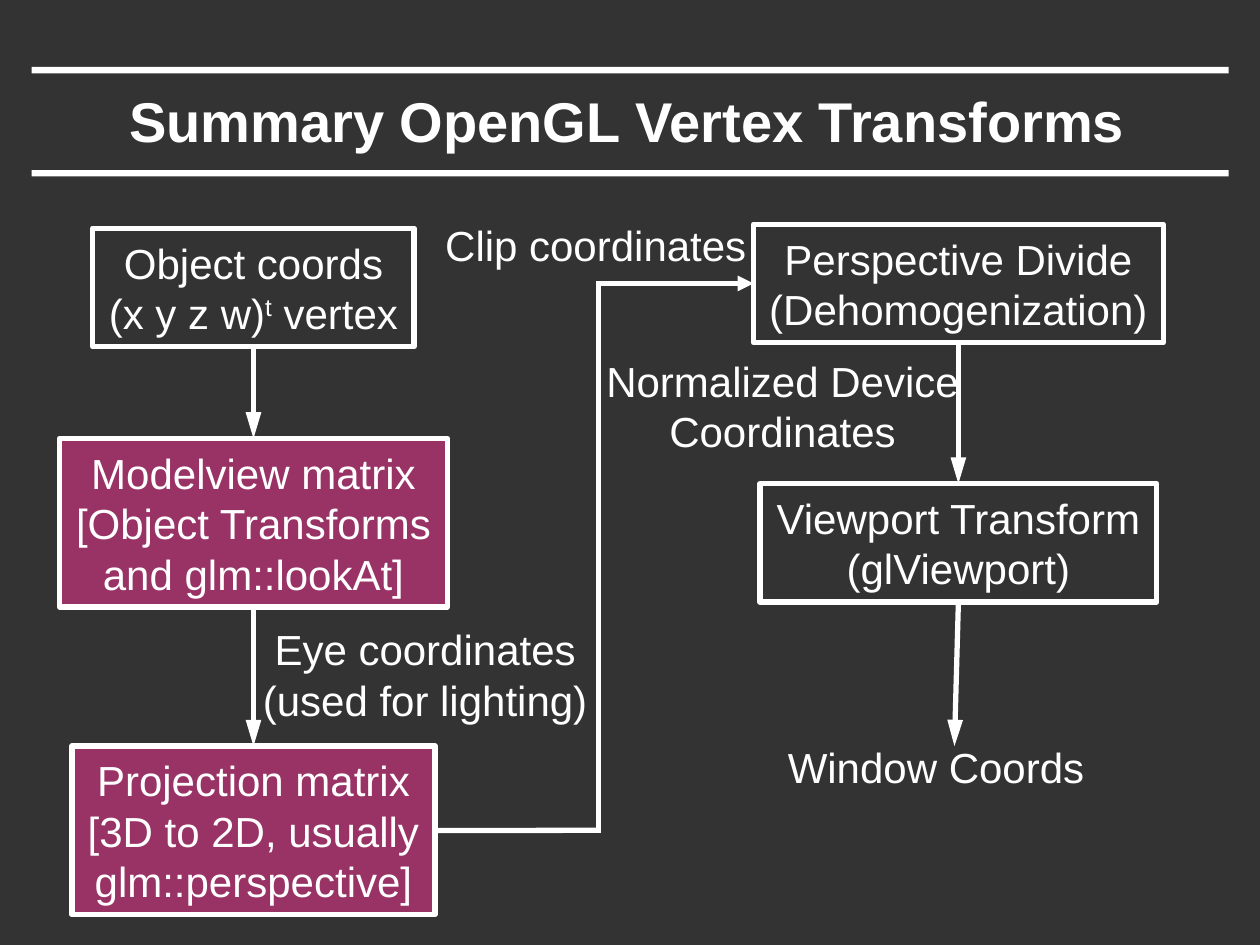
from lxml import etree
from pptx import Presentation
from pptx.dml.color import RGBColor
from pptx.enum import shapes, text
from pptx.oxml import ns
from pptx.util import Cm, Pt

COLORS = {"background": "333333", "foreground": "FFFFFF", "matrix": "993366"}
TOP, LEFT, BOTTOM, RIGHT = range(4)
LINE_WIDTH = Pt(3)


def color(name):
    return RGBColor.from_string(COLORS[name])


def write_text(shape, content, size=24, bold=False, wrap=False,
               anchor=text.MSO_ANCHOR.MIDDLE):
    """Fill a shape with centred lines; text between ^ marks is superscript."""
    frame = shape.text_frame
    frame.word_wrap = wrap
    frame.auto_size = text.MSO_AUTO_SIZE.NONE
    frame.vertical_anchor = anchor
    for index, line in enumerate(content.split("\n")):
        paragraph = frame.add_paragraph() if index else frame.paragraphs[0]
        paragraph.alignment = text.PP_ALIGN.CENTER
        for position, part in enumerate(line.split("^")):
            run = paragraph.add_run()
            run.text = part
            run.font.name = "Arial"
            run.font.size = Pt(size)
            run.font.bold = bold
            run.font.color.rgb = color("foreground")
            if position % 2:
                run.font._element.set("baseline", "30000")


def add_rectangle(slide, left, top, width, height, fill=None, outlined=True):
    shape = slide.shapes.add_shape(
        shapes.MSO_SHAPE.RECTANGLE, Cm(left), Cm(top), Cm(width), Cm(height))
    shape.shadow.inherit = False
    if fill:
        shape.fill.solid()
        shape.fill.fore_color.rgb = color(fill)
    else:
        shape.fill.background()
    if outlined:
        shape.line.color.rgb = color("foreground")
        shape.line.width = LINE_WIDTH
    else:
        shape.line.fill.background()
    return shape


def add_stage(slide, center, top, width, height, content, fill=None):
    shape = add_rectangle(slide, center - width / 2, top, width, height, fill)
    write_text(shape, content)
    return shape


def add_label(slide, left, top, width, height, content):
    label = slide.shapes.add_textbox(Cm(left), Cm(top), Cm(width), Cm(height))
    write_text(label, content, anchor=text.MSO_ANCHOR.TOP)


def add_line(slide, start=(0, 0), end=(0, 0), source=None, target=None, head=None):
    """Draw a line; source and target are (shape, side) pairs to join."""
    line = slide.shapes.add_connector(
        shapes.MSO_CONNECTOR.STRAIGHT, *(Cm(value) for value in (*start, *end)))
    if source:
        line.begin_connect(*source)
    if target:
        line.end_connect(*target)
    line.line.color.rgb = color("foreground")
    line.line.width = LINE_WIDTH
    if head:
        etree.SubElement(line.line._get_or_add_ln(), ns.qn("a:tailEnd"),
                         type="triangle", w="med", len=head)
    etree.SubElement(line.element.spPr, ns.qn("a:effectLst"))


def add_title(slide, left, top, width, height):
    """Title between two horizontal rules."""
    rule = 0.13
    for rule_top in (top, top + height - rule):
        add_rectangle(slide, left, rule_top, width, rule, "foreground", outlined=False)
    title = slide.shapes.title
    title.left, title.top = Cm(left + 1.25), Cm(top + rule)
    title.width, title.height = Cm(21.51), Cm(1.9)
    write_text(title, "Summary OpenGL Vertex Transforms", size=32, bold=True, wrap=True)


def add_matrix_column(slide, left, top, width):
    """Object coordinates through both matrices; returns the last stage."""
    center = left + width / 2
    vertex = add_stage(slide, center, top, 6.48, 2.39,
                       "Object coords\n(x y z w)^t^ vertex")
    modelview = add_stage(slide, center, top + 4.24, width, 3.4,
                          "Modelview matrix\n[Object Transforms\nand glm::lookAt]",
                          "matrix")
    projection = add_stage(slide, center, top + 10.44, 7.32, 3.4,
                           "Projection matrix\n[3D to 2D, usually\nglm::perspective]",
                           "matrix")
    for source, target in ((vertex, modelview), (modelview, projection)):
        add_line(slide, source=(source, BOTTOM), target=(target, TOP), head="lg")
    add_label(slide, left + 3.84, top + 7.85, 7.06, 2.29,
              "Eye coordinates\n(used for lighting)")
    return projection


def add_window_column(slide, left, top, width):
    """Perspective divide down to window coordinates; returns the first stage."""
    center = left + width / 2
    divide = add_stage(slide, center, top, width, 2.39,
                       "Perspective Divide\n(Dehomogenization)")
    viewport = add_stage(slide, center, top + 5.23, 8, 2.39,
                         "Viewport Transform\n(glViewport)")
    add_line(slide, source=(divide, BOTTOM), target=(viewport, TOP), head="lg")
    add_line(slide, end=(center - 0.08, top + 10.52), source=(viewport, BOTTOM), head="lg")
    add_label(slide, left - 3.35, top + 2.52, 7.87, 2.29,
              "Normalized Device\nCoordinates")
    add_label(slide, left + 0.43, top + 10.31, 6.5, 1.27, "Window Coords")
    return divide


def add_clip_route(slide, projection, divide, bend):
    """Bent path from the projection matrix up to the perspective divide."""
    low = (projection.top + projection.height / 2) / Cm(1)
    high = (divide.top + divide.height / 2) / Cm(1)
    overlap = LINE_WIDTH / Cm(1) / 2
    add_line(slide, end=(bend + overlap, low), source=(projection, RIGHT))
    add_line(slide, (bend, low), (bend, high))
    add_line(slide, start=(bend - overlap, high), target=(divide, LEFT), head="med")
    add_label(slide, bend - 3.35, high - 1.42, 6.6, 1.27, "Clip coordinates")


def main():
    presentation = Presentation()
    presentation.slide_width, presentation.slide_height = Cm(25.4), Cm(19.05)
    slide = presentation.slides.add_slide(presentation.slide_layouts[5])
    slide.background.fill.solid()
    slide.background.fill.fore_color.rgb = color("background")

    add_title(slide, 0.64, 1.35, 24.13, 2.21)
    projection = add_matrix_column(slide, 1.2, 4.6, 7.82)
    divide = add_window_column(slide, 15.19, 4.52, 8.26)
    add_clip_route(slide, projection, divide, 12.06)
    presentation.save("out.pptx")


if __name__ == "__main__":
    main()
